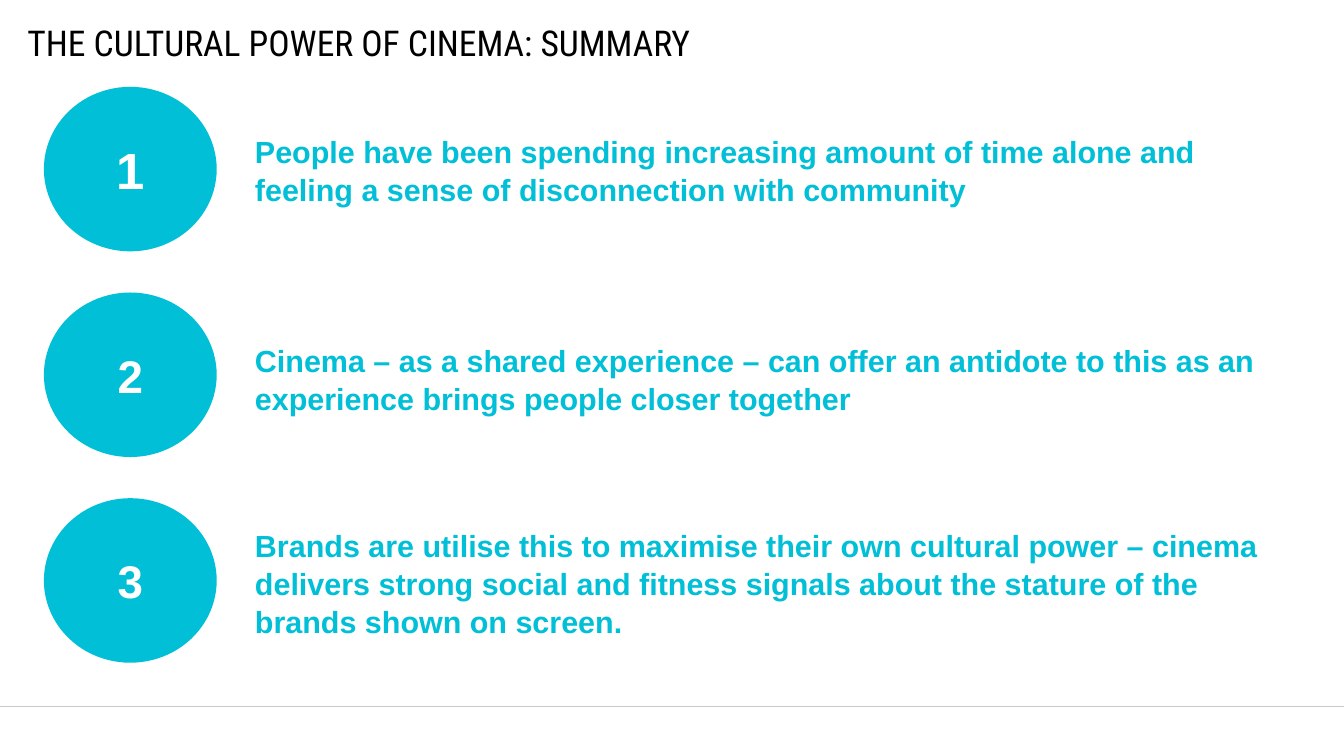
from dataclasses import dataclass

import pptx
import pptx.dml.color
import pptx.enum.shapes
import pptx.enum.text
import pptx.oxml
import pptx.oxml.ns
import pptx.shapes.autoshape
import pptx.slide
import pptx.util

PX = 9144  # EMU per px, 100 px to the inch
SLIDE_WIDTH, SLIDE_HEIGHT = 1470, 827
CYAN, WHITE, BLACK, GREY = "00BFD6", "FFFFFF", "000000", "CAC8C8"
CIRCLE_LEFT, CIRCLE_TOP, CIRCLE_WIDTH, CIRCLE_HEIGHT = 48, 95, 189, 180
CIRCLE_PITCH = 225
MESSAGE_LEFT, MESSAGE_WIDTH = 269, 1138
FOOTER_Y = 773


@dataclass(frozen=True)
class Point:
    message: str
    message_top: int
    message_height: int
    number_size: int


POINTS = [
    Point("People have been spending increasing amount of time alone and feeling "
          "a sense of disconnection with community", 139, 91, 40),
    Point("Cinema – as a shared experience – can offer an antidote to this as an "
          "experience brings people closer together", 368, 91, 36),
    Point("Brands are utilise this to maximise their own cultural power – cinema "
          "delivers strong social and fitness signals about the stature of the "
          "brands shown on screen.", 570, 131, 36),
]


def px(length: int) -> pptx.util.Emu:
    return pptx.util.Emu(length * PX)


def rgb(colour: str) -> pptx.dml.color.RGBColor:
    return pptx.dml.color.RGBColor.from_string(colour)


def write(shape: pptx.shapes.autoshape.Shape, text: str, size: int, colour: str,
          font: str = "Arial", bold: bool = True) -> None:
    shape.text_frame.text = text
    run = shape.text_frame.paragraphs[0].runs[0]
    run.font.name = font
    run.font.size = pptx.util.Pt(size)
    run.font.bold = bold
    run.font.color.rgb = rgb(colour)


def centre_without_margins(shape: pptx.shapes.autoshape.Shape) -> None:
    """Centre the text vertically and clear the insets."""
    frame = shape.text_frame
    frame.vertical_anchor = pptx.enum.text.MSO_ANCHOR.MIDDLE
    frame.margin_left = frame.margin_right = 0
    frame.margin_top = frame.margin_bottom = 0


def add_footer_rule(slide: pptx.slide.Slide) -> None:
    rule = slide.shapes.add_connector(
        pptx.enum.shapes.MSO_CONNECTOR.STRAIGHT,
        0, px(FOOTER_Y), px(SLIDE_WIDTH), px(FOOTER_Y))
    rule.line.color.rgb = rgb(GREY)
    rule.line.width = pptx.util.Pt(0.5)
    properties = rule._element.spPr
    properties.append(properties.makeelement(pptx.oxml.ns.qn("a:effectLst"), {}))


def add_title(slide: pptx.slide.Slide) -> None:
    title = slide.shapes.add_textbox(px(30), px(30), px(1358), px(32))
    write(title, "THE CULTURAL POWER OF CINEMA: SUMMARY", 28, BLACK,
          "Roboto Condensed", False)
    centre_without_margins(title)
    title.text_frame.word_wrap = False


def add_number(slide: pptx.slide.Slide, number: int, size: int) -> None:
    top = CIRCLE_TOP + (number - 1) * CIRCLE_PITCH
    circle = slide.shapes.add_shape(
        pptx.enum.shapes.MSO_SHAPE.OVAL,
        px(CIRCLE_LEFT), px(top), px(CIRCLE_WIDTH), px(CIRCLE_HEIGHT))
    circle.shadow.inherit = False
    circle.fill.solid()
    circle.fill.fore_color.rgb = rgb(CYAN)
    circle.line.fill.background()
    write(circle, str(number), size, WHITE)
    centre_without_margins(circle)
    circle.text_frame.paragraphs[0].alignment = pptx.enum.text.PP_ALIGN.CENTER


def add_message(slide: pptx.slide.Slide, point: Point) -> None:
    message = slide.shapes.add_textbox(
        px(MESSAGE_LEFT), px(point.message_top),
        px(MESSAGE_WIDTH), px(point.message_height))
    write(message, point.message, 24, CYAN)
    message.text_frame.word_wrap = True
    message.text_frame.auto_size = pptx.enum.text.MSO_AUTO_SIZE.SHAPE_TO_FIT_TEXT
    message.text_frame.paragraphs[0].line_spacing = 1.04


def main() -> None:
    presentation = pptx.Presentation()
    presentation.slide_width = px(SLIDE_WIDTH)
    presentation.slide_height = px(SLIDE_HEIGHT)
    slide = presentation.slides.add_slide(presentation.slide_layouts[6])
    add_footer_rule(slide)
    add_title(slide)
    for number, point in enumerate(POINTS, start=1):
        add_number(slide, number, point.number_size)
        add_message(slide, point)
    presentation.save("out.pptx")


if __name__ == "__main__":
    main()
